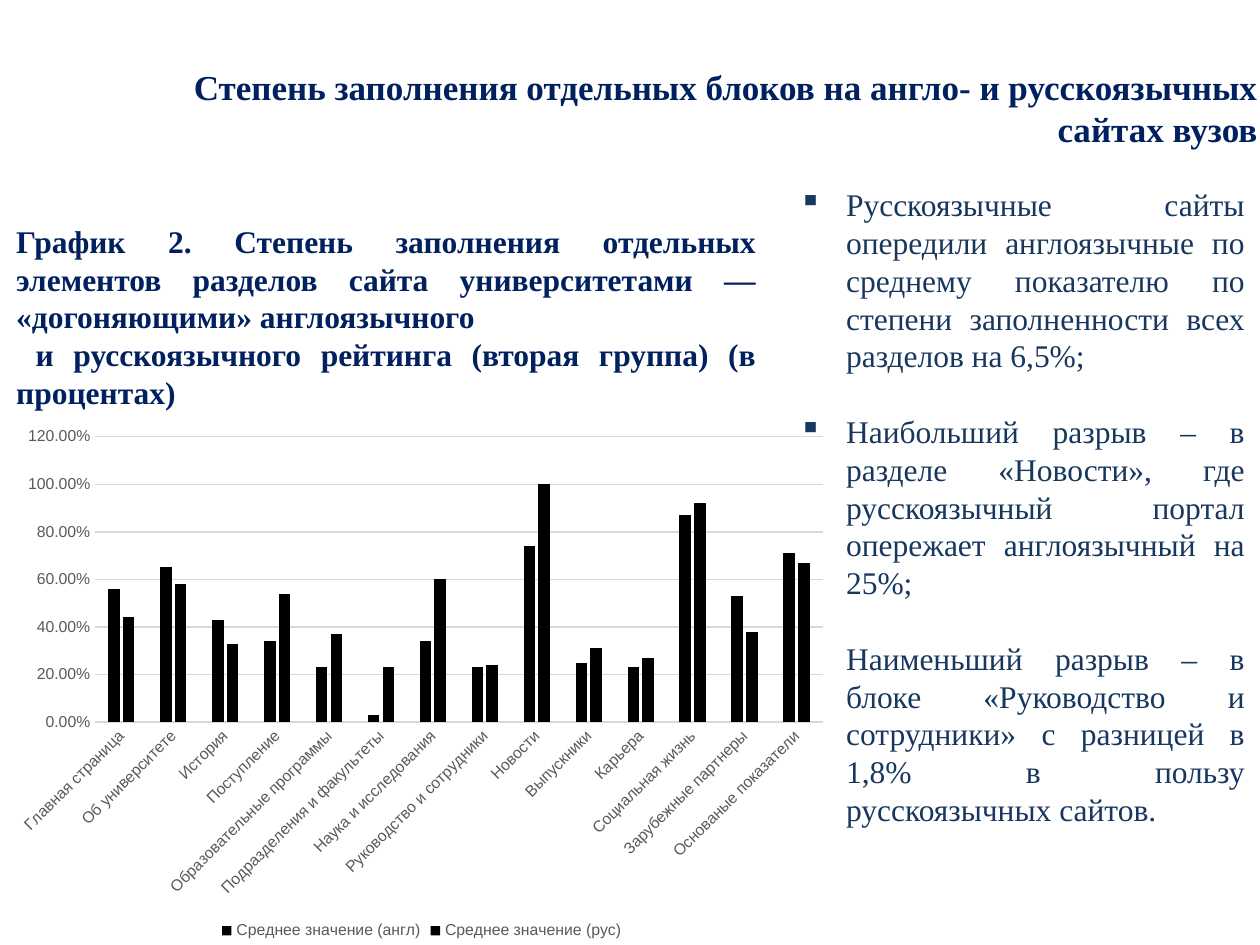
"""Build a slide comparing how fully English and Russian university sites are filled in."""
from lxml import etree
from pptx import Presentation
from pptx.chart.data import CategoryChartData
from pptx.dml.color import RGBColor
from pptx.enum.chart import XL_CHART_TYPE, XL_LEGEND_POSITION, XL_TICK_MARK
from pptx.enum.text import MSO_ANCHOR, PP_ALIGN
from pptx.oxml.ns import qn
from pptx.util import Pt

COLUMNS = XL_CHART_TYPE.COLUMN_CLUSTERED
BOTTOM = XL_LEGEND_POSITION.BOTTOM
NO_TICK = XL_TICK_MARK.NONE
TOP, MIDDLE = MSO_ANCHOR.TOP, MSO_ANCHOR.MIDDLE
RIGHT, JUSTIFY = PP_ALIGN.RIGHT, PP_ALIGN.JUSTIFY

THEME = {
    "title": {"name": "Times New Roman", "size": Pt(20), "bold": True, "color": "002060"},
    "caption": {"name": "Times New Roman", "size": Pt(18), "bold": True, "color": "002060"},
    "body": {"name": "Times New Roman", "size": Pt(18), "bold": False, "color": "17375E"},
    "chart": {"name": "Arial", "size": Pt(10), "bold": False, "color": "000000"},
    "label": {"name": "Arial", "size": Pt(9), "bold": False, "color": "595959"},
    "bar": "000000",
    "grid": "D9D9D9",
}

TITLE = ["Степень заполнения отдельных блоков на англо- и русскоязычных сайтах вузов"]
CAPTION = [
    "График 2. Степень заполнения отдельных элементов разделов сайта университетами — "
    "«догоняющими» англоязычного",
    " и русскоязычного рейтинга (вторая группа) (в процентах)",
]
FINDINGS = [
    ("▪", "Русскоязычные сайты опередили англоязычные по среднему показателю по степени "
          "заполненности всех разделов на 6,5%;"),
    ("▪", "Наибольший разрыв – в разделе «Новости», где русскоязычный портал опережает "
          "англоязычный на 25%;"),
    (None, "Наименьший разрыв – в блоке «Руководство и сотрудники» с разницей в 1,8% "
           "в пользу русскоязычных сайтов."),
]
SERIES = ("Среднее значение (англ)", "Среднее значение (рус)")
FILLING = [
    ("Главная страница", 0.56, 0.44),
    ("Об университете", 0.65, 0.58),
    ("История", 0.43, 0.33),
    ("Поступление", 0.34, 0.54),
    ("Образовательные программы", 0.23, 0.37),
    ("Подразделения и факультеты", 0.03, 0.23),
    ("Наука и исследования", 0.34, 0.6),
    ("Руководство и сотрудники", 0.23, 0.24),
    ("Новости", 0.74, 1),
    ("Выпускники", 0.25, 0.31),
    ("Карьера", 0.23, 0.27),
    ("Социальная жизнь", 0.87, 0.92),
    ("Зарубежные партнеры", 0.53, 0.38),
    ("Основаные показатели", 0.71, 0.67),
]

PLACES = {
    "title": (82.8, 37.4, 635.8, 62.6),
    "body": (456.5, 105.8, 254.9, 425.5),
    "caption": (2.2, 122.4, 437, 116.6),
    "chart": (2.2, 238.3, 477.4, 301.7),
}
BULLET_INDENT = Pt(27)
FINDING_GAP = Pt(21.6)


def place(name):
    return [Pt(length) for length in PLACES[name]]


def set_font(font, style):
    for key, value in THEME[style].items():
        if key == "color":
            font.color.rgb = RGBColor.from_string(value)
        else:
            setattr(font, key, value)


def add_text(page, style, lines, align, anchor=TOP, margins=(0, 0)):
    frame = page.shapes.add_textbox(*place(style)).text_frame
    side, edge = (Pt(margin) for margin in margins)
    settings = {"word_wrap": True, "vertical_anchor": anchor, "margin_left": side,
                "margin_right": side, "margin_top": edge, "margin_bottom": edge}
    for key, value in settings.items():
        setattr(frame, key, value)
    for index, line in enumerate(lines):
        para = frame.add_paragraph() if index else frame.paragraphs[0]
        para.alignment = align
        span = para.add_run()
        span.text = line
        set_font(span.font, style)
    return frame.paragraphs


def add_findings(page):
    paras = add_text(page, "body", [text for _, text in FINDINGS], JUSTIFY)
    for index, (para, (mark, _)) in enumerate(zip(paras, FINDINGS)):
        if index:
            para.space_before = FINDING_GAP
        properties = para._p.get_or_add_pPr()
        properties.set("marL", str(BULLET_INDENT))
        properties.set("indent", str(-BULLET_INDENT if mark else 0))
        if mark:
            etree.SubElement(properties, qn("a:buChar")).set("char", mark)


def draw_line(line):
    line.color.rgb = RGBColor.from_string(THEME["grid"])
    line.width = Pt(0.75)


def add_filling_chart(page):
    categories, *columns = zip(*FILLING)
    data = CategoryChartData(number_format="0.00%")
    data.categories = categories
    for name, values in zip(SERIES, columns):
        data.add_series(name, values)
    chart = page.shapes.add_chart(COLUMNS, *place("chart"), data).chart
    set_font(chart.font, "chart")
    chart.has_title = False
    chart.has_legend = True
    chart.legend.position = BOTTOM
    chart.legend.include_in_layout = False
    set_font(chart.legend.font, "label")

    plot = chart.plots[0]
    for key, value in {"gap_width": 219, "overlap": -27, "vary_by_categories": False}.items():
        setattr(plot, key, value)
    for series in plot.series:
        series.format.fill.solid()
        series.format.fill.fore_color.rgb = RGBColor.from_string(THEME["bar"])

    for axis in (chart.category_axis, chart.value_axis):
        axis.major_tick_mark = axis.minor_tick_mark = NO_TICK
        set_font(axis.tick_labels.font, "label")
    draw_line(chart.category_axis.format.line)
    scale = chart.value_axis
    for key, value in {"minimum_scale": 0, "maximum_scale": 1.2, "major_unit": 0.2}.items():
        setattr(scale, key, value)
    scale.format.line.fill.background()
    draw_line(scale.major_gridlines.format.line)
    scale.tick_labels.number_format = "0.00%"
    scale.tick_labels.number_format_is_linked = False


def main():
    deck = Presentation()
    deck.slide_width, deck.slide_height = Pt(720), Pt(540)
    page = deck.slides.add_slide(deck.slide_layouts[6])
    add_text(page, "title", TITLE, RIGHT)
    add_findings(page)
    add_text(page, "caption", CAPTION, JUSTIFY, MIDDLE, (7.2, 3.6))
    add_filling_chart(page)
    deck.save("out.pptx")


if __name__ == "__main__":
    main()
